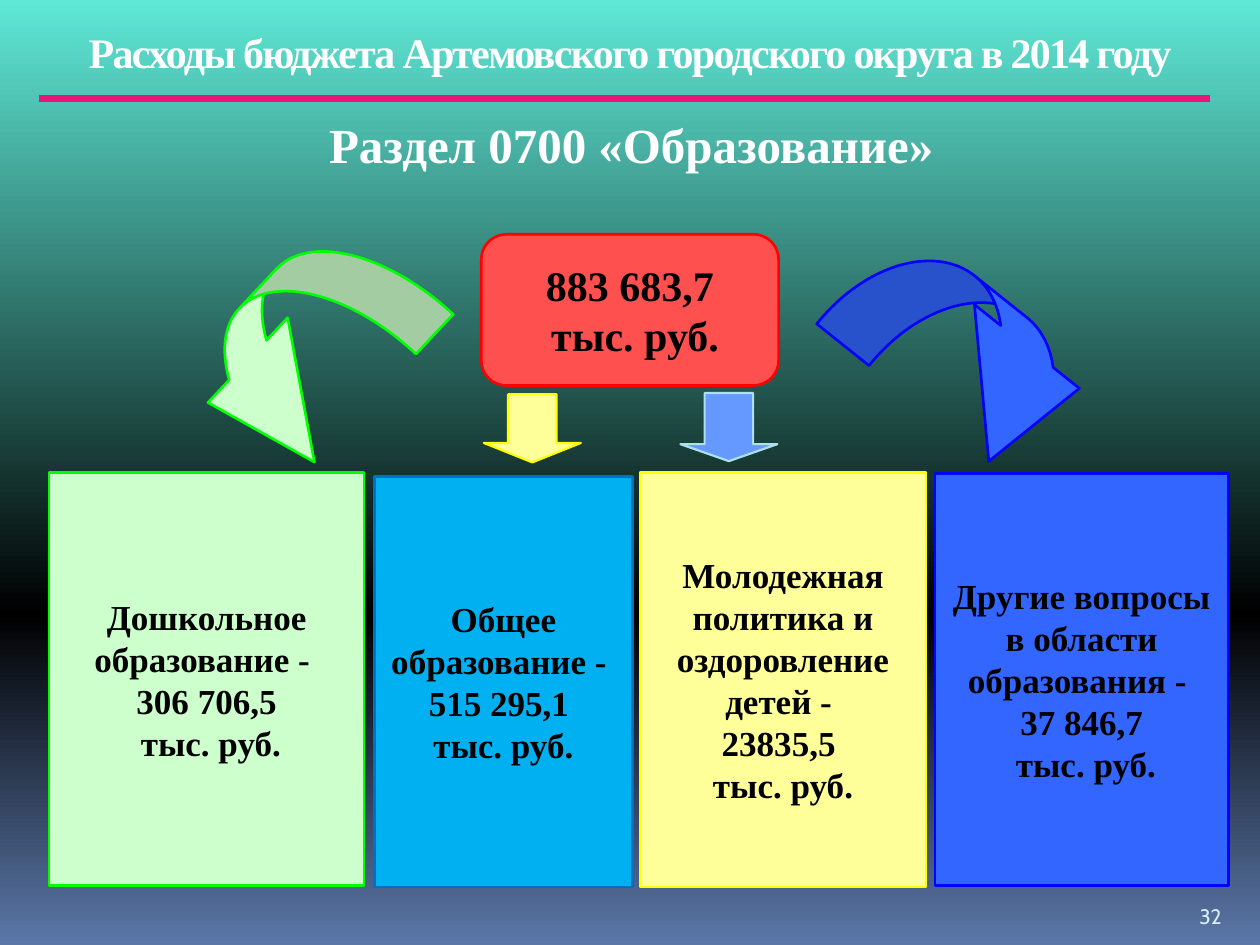
from copy import deepcopy

from pptx import Presentation
from pptx.dml.color import RGBColor
from pptx.enum.shapes import MSO_CONNECTOR, MSO_SHAPE
from pptx.enum.text import MSO_ANCHOR, PP_ALIGN
from pptx.oxml.ns import qn
from pptx.oxml.xmlchemy import OxmlElement
from pptx.util import Inches, Pt

COLORS = {
    "white": "FFFFFF", "black": "000000", "number": "D6ECFF", "rule": "EA157A",
    "mint": "5FE8D6", "slate": "5B77A8",
    "red": "FF5050", "red_edge": "FF0000",
    "green": "CCFFCC", "green_edge": "00FF00",
    "sky": "00B0F0", "sky_edge": "0070C0",
    "yellow": "FFFF99", "yellow_edge": "FFFF00",
    "blue": "3366FF", "blue_edge": "0000FF",
    "pale_blue": "6699FF", "pale_blue_edge": "ACE0EA",
}


def color(name):
    return RGBColor.from_string(COLORS[name])


def write(frame, text, size, ink="black", font="Times New Roman", bold=True,
          align=PP_ALIGN.CENTER, anchor=MSO_ANCHOR.TOP, insets=(0.1, 0.05),
          tracking=None, line_spacing=None, before=None):
    frame.word_wrap = True
    frame.vertical_anchor = anchor
    frame.margin_left = frame.margin_right = Inches(insets[0])
    frame.margin_top = frame.margin_bottom = Inches(insets[1])
    for index, line in enumerate(text.split("\n")):
        para = frame.add_paragraph() if index else frame.paragraphs[0]
        para.alignment = align
        if line_spacing:
            para.line_spacing = line_spacing
        if before:
            para.space_before = Pt(before)
        span = para.add_run()
        span.text = line
        span.font.name = font
        span.font.size = Pt(size)
        span.font.bold = bold
        span.font.color.rgb = color(ink)
        if tracking:
            span.font._element.set("spc", str(tracking * 100))


class BudgetSlide:
    def __init__(self, page):
        self.page = page

    def background(self, stops):
        fill = self.page.background.fill
        fill.gradient()
        fill.gradient_angle = 270
        stop_list = self.page._element.find(".//" + qn("a:gsLst"))
        stop_list.append(deepcopy(stop_list[-1]))
        for stop, (position, name) in zip(fill.gradient_stops, stops):
            stop.position = position
            stop.color.rgb = color(name)

    def text(self, place, text, size, **style):
        box = self.page.shapes.add_textbox(*map(Inches, place))
        write(box.text_frame, text, size, **style)

    def rule(self, left, right, top, name, width):
        line = self.page.shapes.add_connector(
            MSO_CONNECTOR.STRAIGHT, Inches(left), Inches(top), Inches(right), Inches(top))
        line.line.color.rgb = color(name)
        line.line.width = Pt(width)
        line._element.spPr.append(OxmlElement("a:effectLst"))

    def shape(self, kind, place, name, width=1.5, adjust=(), rotation=0):
        shape = self.page.shapes.add_shape(kind, *map(Inches, place))
        shape.shadow.inherit = False
        shape.fill.solid()
        shape.fill.fore_color.rgb = color(name)
        shape.line.color.rgb = color(name + "_edge")
        shape.line.width = Pt(width)
        shape.rotation = rotation
        for index, value in enumerate(adjust):
            shape.adjustments[index] = value
        return shape

    def panel(self, place, name, text):
        box = self.shape(MSO_SHAPE.RECTANGLE, place, name)
        write(box.text_frame, text, 20, anchor=MSO_ANCHOR.MIDDLE, insets=(0.12, 0))

    def total(self, place, name, text):
        box = self.shape(MSO_SHAPE.ROUNDED_RECTANGLE, place, name, adjust=(0.167,))
        write(box.text_frame, text, 24, anchor=MSO_ANCHOR.MIDDLE, insets=(0.14, 0.05))


def main():
    deck = Presentation()
    deck.slide_width, deck.slide_height = Inches(10), Inches(7.5)
    slide = BudgetSlide(deck.slides.add_slide(deck.slide_layouts[6]))

    slide.background([(0, "mint"), (0.65, "black"), (1, "slate")])
    slide.text((0.5, 0.16, 9, 0.65),
               "Расходы бюджета Артемовского городского округа в 2014 году",
               24, ink="white", tracking=-1)
    slide.text((9.42, 7.02, 0.5, 0.4), "32", 12, ink="number", font="Cabin",
               bold=False, align=PP_ALIGN.LEFT, anchor=MSO_ANCHOR.BOTTOM)
    slide.rule(0.31, 9.6, 0.78, "rule", 3.75)
    slide.total((3.82, 1.86, 2.36, 1.2), "red", "883 683,7\n тыс. руб.")

    for place, name, text in [
        ((0.39, 3.75, 2.5, 3.28), "green",
         "Дошкольное образование - \n306 706,5\n тыс. руб."),
        ((2.97, 3.78, 2.05, 3.26), "sky",
         "Общее образование - \n515 295,1 \nтыс. руб."),
        ((5.08, 3.75, 2.27, 3.29), "yellow",
         "Молодежная политика и оздоровление детей - \n23835,5 \nтыс. руб."),
        ((7.42, 3.76, 2.33, 3.27), "blue",
         "Другие вопросы в области образования - \n37 846,7\n тыс. руб."),
    ]:
        slide.panel(place, name, text)

    slide.shape(MSO_SHAPE.CURVED_UP_ARROW, (1.39, 2.18, 2.07, 1.27), "green",
                adjust=(0.34, 0.727, 0.74), rotation=133.2)
    slide.shape(MSO_SHAPE.CURVED_DOWN_ARROW, (6.57, 2.32, 2.28, 1.08), "blue",
                adjust=(0.492, 0.986, 0.834), rotation=38.6)
    slide.shape(MSO_SHAPE.DOWN_ARROW, (5.4, 3.12, 0.77, 0.54), "pale_blue",
                width=1.25, adjust=(0.5, 0.25))
    slide.shape(MSO_SHAPE.DOWN_ARROW, (3.84, 3.13, 0.77, 0.54), "yellow",
                width=1.25, adjust=(0.5, 0.285))
    slide.text((0.51, 0.91, 9, 0.49), "Раздел 0700 «Образование»", 28,
               ink="white", line_spacing=0.9, before=7)
    deck.save("out.pptx")


if __name__ == "__main__":
    main()
